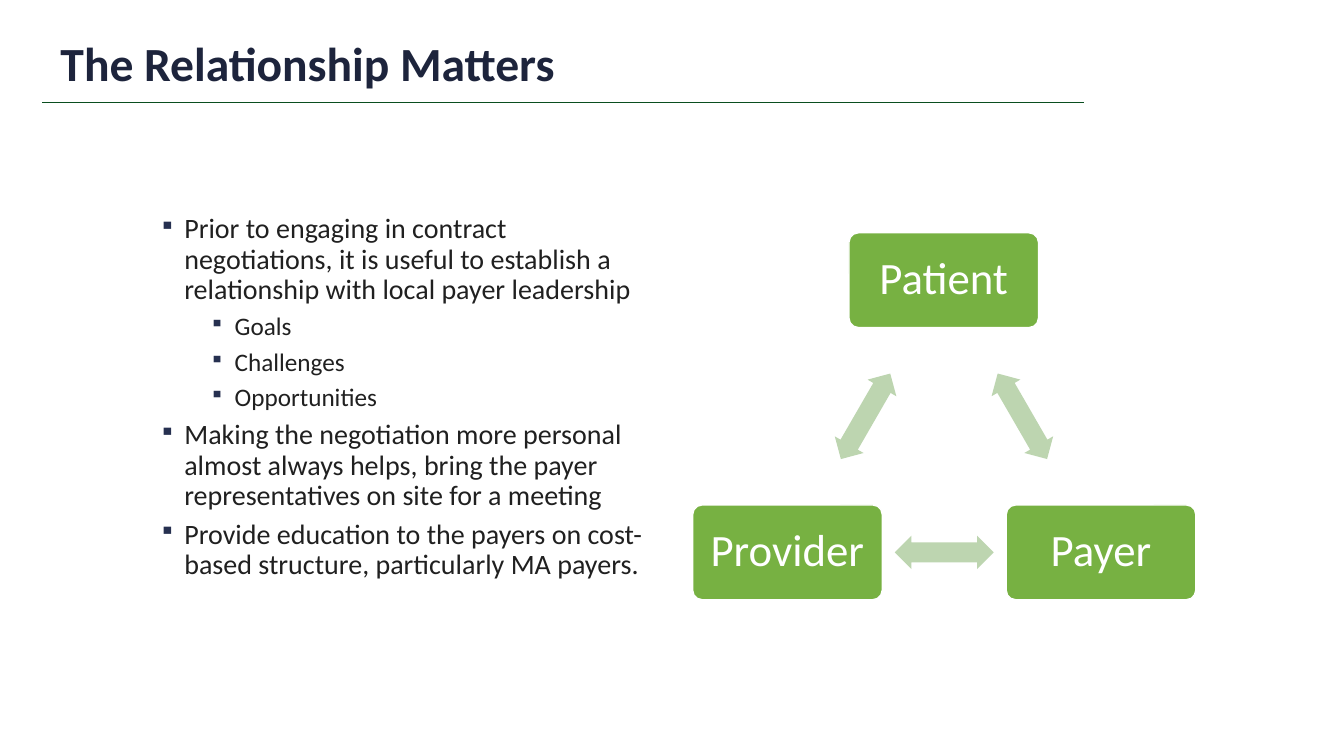
from itertools import pairwise
from math import atan2, degrees

from lxml.etree import SubElement
from pptx import Presentation
from pptx.dml.color import RGBColor
from pptx.enum.shapes import MSO_CONNECTOR as Line, MSO_SHAPE as Shape
from pptx.enum.text import MSO_ANCHOR as Anchor, PP_ALIGN as Align
from pptx.oxml.ns import qn
from pptx.util import Inches, Pt


def paint(color, code):
    color.rgb = RGBColor.from_string(code)


def write(para, text, size=20, color="202020", bold=False, align=None, after=0):
    para.text = text
    para.line_spacing = 0.9
    para.space_before = Pt(0)
    para.space_after = Pt(after)
    para.alignment = align
    font = para.font
    font.name, font.size, font.bold = "Calibri", Pt(size), bold
    paint(font.color, color)


class Deck:
    navy, rule, mark = "1D243C", "0A4E1F", "263050"
    green, pale, white = "77B142", "BDD5B0", "FFFFFF"

    def __init__(self):
        self.prs = Presentation()
        self.prs.slide_width, self.prs.slide_height = Inches(13.33), Inches(7.5)
        self.slide = self.prs.slides.add_slide(self.prs.slide_layouts[5])
        self.shapes = self.slide.shapes

    def title(self, text, x, y, w, h):
        box = self.shapes.title
        box.left, box.top, box.width, box.height = map(Inches, (x, y, w, h))
        box.text_frame.vertical_anchor = Anchor.BOTTOM
        write(box.text_frame.paragraphs[0], text, size=34, color=self.navy,
              bold=True, align=Align.LEFT)

    def line(self, x1, y1, x2, y2):
        line = self.shapes.add_connector(
            Line.STRAIGHT, *map(Inches, (x1, y1, x2, y2)))
        paint(line.line.color, self.rule)
        line.line.width = Pt(1)
        SubElement(line._element.spPr, qn("a:effectLst"))

    def bullet(self, para, level):
        para.level = level
        props = para._p.get_or_add_pPr()
        props.set("marL", str(Inches(0.26 + 0.5 * level)))
        props.set("indent", str(Inches(-0.25)))
        color = SubElement(props, qn("a:buClr"))
        SubElement(color, qn("a:srgbClr"), val=self.mark)
        SubElement(props, qn("a:buSzPct"), val="80000")
        SubElement(props, qn("a:buChar"), char="▪")

    def list(self, items, x, y, w, h):
        frame = self.shapes.add_textbox(*map(Inches, (x, y, w, h))).text_frame
        frame.word_wrap = True
        for i, (level, text) in enumerate(items):
            para = frame.add_paragraph() if i else frame.paragraphs[0]
            self.bullet(para, level)
            write(para, text, size=20 - 2 * level, after=6)

    def shape(self, kind, mid, w, h, fill, *adjust):
        x, y = mid
        shape = self.shapes.add_shape(
            kind, *map(Inches, (x - w / 2, y - h / 2, w, h)))
        shape.shadow.inherit = False
        shape.fill.solid()
        paint(shape.fill.fore_color, fill)
        shape.line.fill.background()
        for i, value in enumerate(adjust):
            shape.adjustments[i] = value
        return shape

    def card(self, text, mid):
        card = self.shape(Shape.ROUNDED_RECTANGLE, mid, 1.88, 0.94, self.green, 0.1)
        paint(card.line.color, self.white)
        card.line.width = Pt(1)
        frame = card.text_frame
        frame.word_wrap = True
        frame.vertical_anchor = Anchor.MIDDLE
        frame.margin_left = frame.margin_right = Inches(0.13)
        frame.margin_top = frame.margin_bottom = Inches(0.13)
        write(frame.paragraphs[0], text, size=32, color=self.white,
              align=Align.CENTER)

    def arrow(self, start, end):
        (x1, y1), (x2, y2) = start, end
        mid = (x1 + x2) / 2, (y1 + y2) / 2
        arrow = self.shape(Shape.LEFT_RIGHT_ARROW, mid, 0.98, 0.33,
                           self.pale, 0.6, 0.5)
        arrow.rotation = round(degrees(atan2(y2 - y1, x2 - x1))) % 360


def main():
    deck = Deck()

    # Heading
    deck.line(0.42, 1.02, 10.75, 1.02)
    deck.title("The Relationship Matters", 0.5, 0.3, 10.4, 0.66)

    # Advice
    deck.list([
        (0, "Prior to engaging in contract negotiations, it is useful to "
            "establish a relationship with local payer leadership"),
        (1, "Goals"),
        (1, "Challenges"),
        (1, "Opportunities"),
        (0, "Making the negotiation more personal almost always helps, bring "
            "the payer representatives on site for a meeting"),
        (0, "Provide education to the payers on cost-based structure, "
            "particularly MA payers."),
    ], 1.47, 2.08, 5, 4.51)

    # Triangle of parties, joined in a cycle
    parties = {"Patient": (9.36, 2.78), "Payer": (10.92, 5.48),
               "Provider": (7.81, 5.48)}
    for name, mid in parties.items():
        deck.card(name, mid)
    mids = list(parties.values())
    for start, end in pairwise(mids + mids[:1]):
        deck.arrow(start, end)

    deck.prs.save("out.pptx")


if __name__ == "__main__":
    main()
